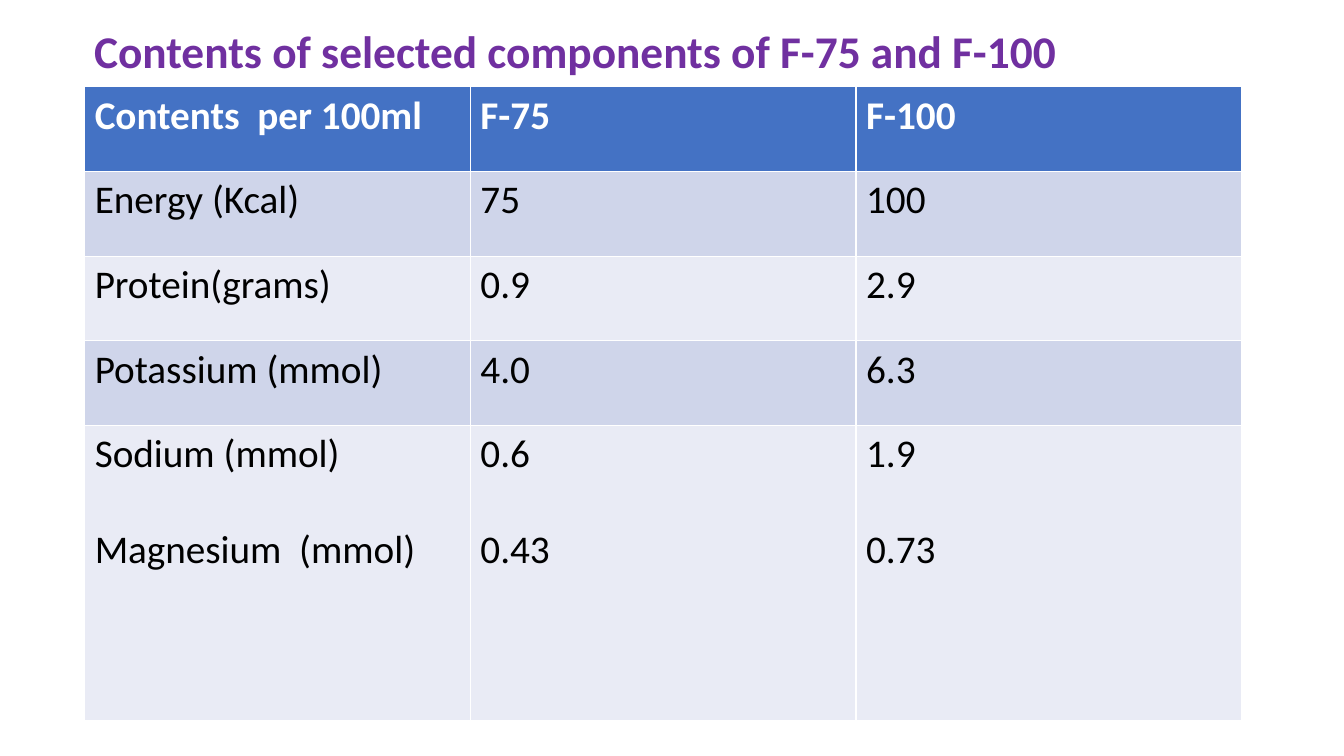
from pptx import Presentation
from pptx.dml.color import RGBColor
from pptx.enum.text import MSO_ANCHOR, MSO_AUTO_SIZE, PP_ALIGN
from pptx.util import Pt

PX = 6350
FONT = "Calibri"
LEFT = PP_ALIGN.LEFT
MIDDLE = MSO_ANCHOR.MIDDLE
NO_FIT = MSO_AUTO_SIZE.NONE

PURPLE = RGBColor(0x70, 0x30, 0xA0)
BLUE = RGBColor(0x44, 0x72, 0xC4)
WHITE = RGBColor(0xFF, 0xFF, 0xFF)
BLACK = RGBColor(0x00, 0x00, 0x00)
BANDS = [RGBColor(0xE9, 0xEB, 0xF5), RGBColor(0xCF, 0xD5, 0xEA)]

TITLE = "Contents of selected components of F-75 and F-100"
ROWS = [
    ["Contents  per 100ml", "F-75", "F-100"],
    ["Energy (Kcal)", "75", "100"],
    ["Protein(grams)", "0.9", "2.9"],
    ["Potassium (mmol)", "4.0", "6.3"],
    ["Sodium (mmol)\nMagnesium  (mmol)", "0.6\n0.43", "1.9\n0.73"],
]
ROW_H = 121
LINE_GAP = Pt(34)


def set_font(para, size, color, bold):
    font = para.font
    font.name = FONT
    font.size = Pt(size)
    font.bold = bold
    font.color.rgb = color


def add_title(slide, box):
    title = slide.shapes.title
    title.left, title.top, title.width, title.height = [n * PX for n in box]
    frame = title.text_frame
    frame.text = TITLE
    frame.word_wrap = True
    frame.auto_size = NO_FIT
    frame.vertical_anchor = MIDDLE
    para = frame.paragraphs[0]
    para.alignment = LEFT
    para.line_spacing = 0.9
    set_font(para, 32.4, PURPLE, True)


def fill_cell(cell, text, fill, color, bold):
    cell.fill.solid()
    cell.fill.fore_color.rgb = fill
    cell.text_frame.text = text
    for i, para in enumerate(cell.text_frame.paragraphs):
        if i:
            para.space_before = LINE_GAP
        set_font(para, 28, color, bold)


def add_grid(slide, box):
    left, top, width, height = [n * PX for n in box]
    table = slide.shapes.add_table(
        len(ROWS), len(ROWS[0]), left, top, width, height
    ).table
    last = len(ROWS) - 1
    for r, texts in enumerate(ROWS):
        table.rows[r].height = height - last * ROW_H * PX if r == last else ROW_H * PX
        head = r == 0
        fill = BLUE if head else BANDS[r % 2]
        for c, text in enumerate(texts):
            fill_cell(table.cell(r, c), text, fill, WHITE if head else BLACK, head)


def main():
    deck = Presentation()
    deck.slide_width = 1920 * PX
    deck.slide_height = 1080 * PX
    slide = deck.slides.add_slide(deck.slide_layouts[5])
    add_title(slide, (120, 30, 1680, 94))
    add_grid(slide, (121, 124, 1653, 906))
    deck.save("out.pptx")


if __name__ == "__main__":
    main()
